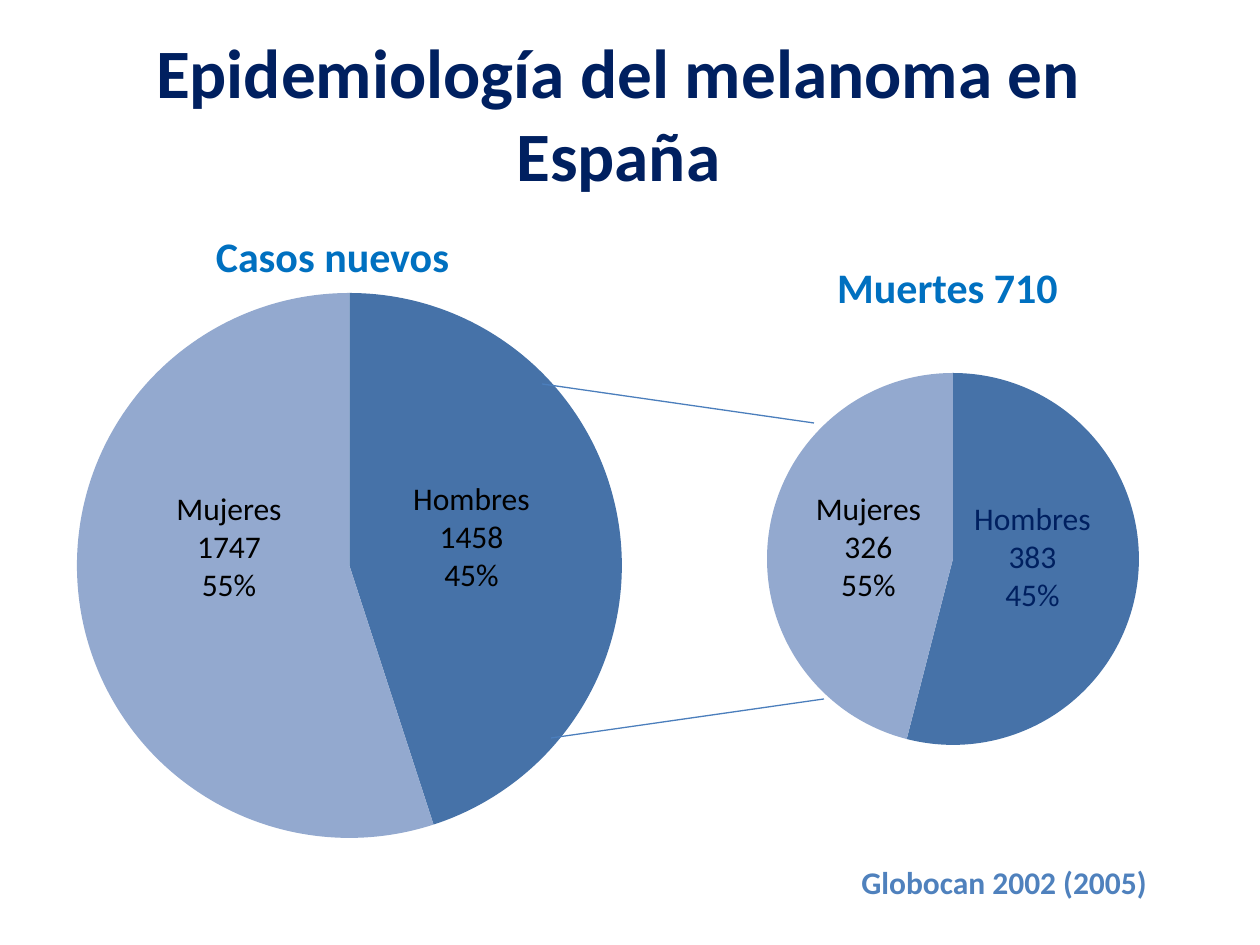
from dataclasses import dataclass

from lxml.etree import SubElement
from pptx import Presentation
from pptx.chart.data import CategoryChartData
from pptx.dml.color import RGBColor
from pptx.enum.chart import XL_CHART_TYPE
from pptx.enum.shapes import MSO_CONNECTOR
from pptx.enum.text import MSO_ANCHOR, PP_ALIGN
from pptx.oxml import parse_xml
from pptx.oxml.ns import nsdecls, qn
from pptx.util import Pt

EMU_PER_PX = 914400 / 126


@dataclass(frozen=True)
class Theme:
    font: str = "Calibri"
    navy: str = "002060"
    heading: str = "0070C0"
    source: str = "4F81BD"
    black: str = "000000"
    line: str = "4B7EBC"
    slices: tuple = ("4672A8", "93A9CF")
    title_size: float = 39.6
    heading_size: int = 24
    body_size: int = 18


THEME = Theme()

TITLE = ("Epidemiología del melanoma en España", (40, 21, 1157, 183))
HEADINGS = [
    ("Casos nuevos", (154, 224, 357, 63)),
    ("Muertes 710", (769, 255, 357, 63)),
]
SOURCE = ("Globocan 2002 (2005)", (849, 857, 314, 50))

# values, chart frame, circle (left, top, diameter)
PIES = [
    ((45, 55), (32, 276, 634, 580), (77, 293, 545)),
    ((54, 46), (748, 344, 407, 431), (767, 373, 372)),
]
LINKS = [((542, 384), (814, 423)), ((551, 738), (824, 699))]
SLICE_LABELS = [
    (("Hombres", "1458", "45%"), (392, 473, 159, 127), THEME.black),
    (("Mujeres", "1747", "55%"), (105, 483, 248, 127), THEME.black),
    (("Mujeres", "326", "55%"), (779, 483, 179, 127), THEME.black),
    (("Hombres", "383", "45%"), (948, 493, 169, 127), THEME.navy),
]


def px(*lengths):
    return [round(length * EMU_PER_PX) for length in lengths]


def add_text(slide, text, frame, size, color, bold=False,
             align=PP_ALIGN.CENTER, anchor=MSO_ANCHOR.TOP, wrap=True):
    box = slide.shapes.add_textbox(*px(*frame))
    text_frame = box.text_frame
    text_frame.word_wrap = wrap
    text_frame.vertical_anchor = anchor
    text_frame.text = text
    for para in text_frame.paragraphs:
        para.alignment = align
        font = para.runs[0].font
        font.name, font.size, font.bold = THEME.font, Pt(size), bold
        font.color.rgb = RGBColor.from_string(color)


def place_circle(chart, frame, circle):
    """Fix the pie inside its frame, as fractions of the frame."""
    left, top, width, height = frame
    circle_left, circle_top, diameter = circle
    fractions = {
        "x": (circle_left - left) / width,
        "y": (circle_top - top) / height,
        "w": diameter / width,
        "h": diameter / height,
    }
    plot_area = chart.plots[0]._element.getparent()
    for old in plot_area.findall(qn("c:layout")):
        plot_area.remove(old)
    layout = parse_xml(f"<c:layout {nsdecls('c')}><c:manualLayout/></c:layout>")
    settings = [("layoutTarget", "inner"), ("xMode", "edge"), ("yMode", "edge")]
    settings += [(name, f"{value:.4f}") for name, value in fractions.items()]
    for name, value in settings:
        SubElement(layout[0], qn(f"c:{name}")).set("val", value)
    plot_area.insert(0, layout)


def add_pie(slide, values, frame, circle):
    data = CategoryChartData()
    data.categories = ["1", "2"]
    data.add_series("Series 1", values)
    chart = slide.shapes.add_chart(XL_CHART_TYPE.PIE, *px(*frame), data).chart
    chart.has_legend = False
    chart.has_title = False
    chart.font.name, chart.font.size = THEME.font, Pt(THEME.body_size)
    chart.font.color.rgb = RGBColor.from_string(THEME.black)
    plot = chart.plots[0]
    plot.vary_by_categories = True
    for index, color in enumerate(THEME.slices):
        style = plot.series[0].points[index].format
        style.fill.solid()
        style.fill.fore_color.rgb = RGBColor.from_string(color)
        style.line.fill.background()
    place_circle(chart, frame, circle)


def add_link(slide, start, end):
    link = slide.shapes.add_connector(MSO_CONNECTOR.STRAIGHT, *px(*start, *end))
    link.line.color.rgb = RGBColor.from_string(THEME.line)
    link.line.width = Pt(0.75)
    SubElement(link._element.spPr, qn("a:effectLst"))


def main():
    deck = Presentation()
    deck.slide_width, deck.slide_height = px(1260, 945)
    slide = deck.slides.add_slide(deck.slide_layouts[6])

    add_text(slide, *TITLE, THEME.title_size, THEME.navy, bold=True,
             anchor=MSO_ANCHOR.MIDDLE)
    for pie, heading in zip(PIES, HEADINGS):
        add_pie(slide, *pie)
        add_text(slide, *heading, THEME.heading_size, THEME.heading, bold=True)
    add_text(slide, *SOURCE, THEME.body_size, THEME.source, bold=True,
             align=PP_ALIGN.LEFT, wrap=False)
    for link in LINKS:
        add_link(slide, *link)
    for lines, frame, color in SLICE_LABELS:
        add_text(slide, "\n".join(lines), frame, THEME.body_size, color)

    deck.save("out.pptx")


if __name__ == "__main__":
    main()
